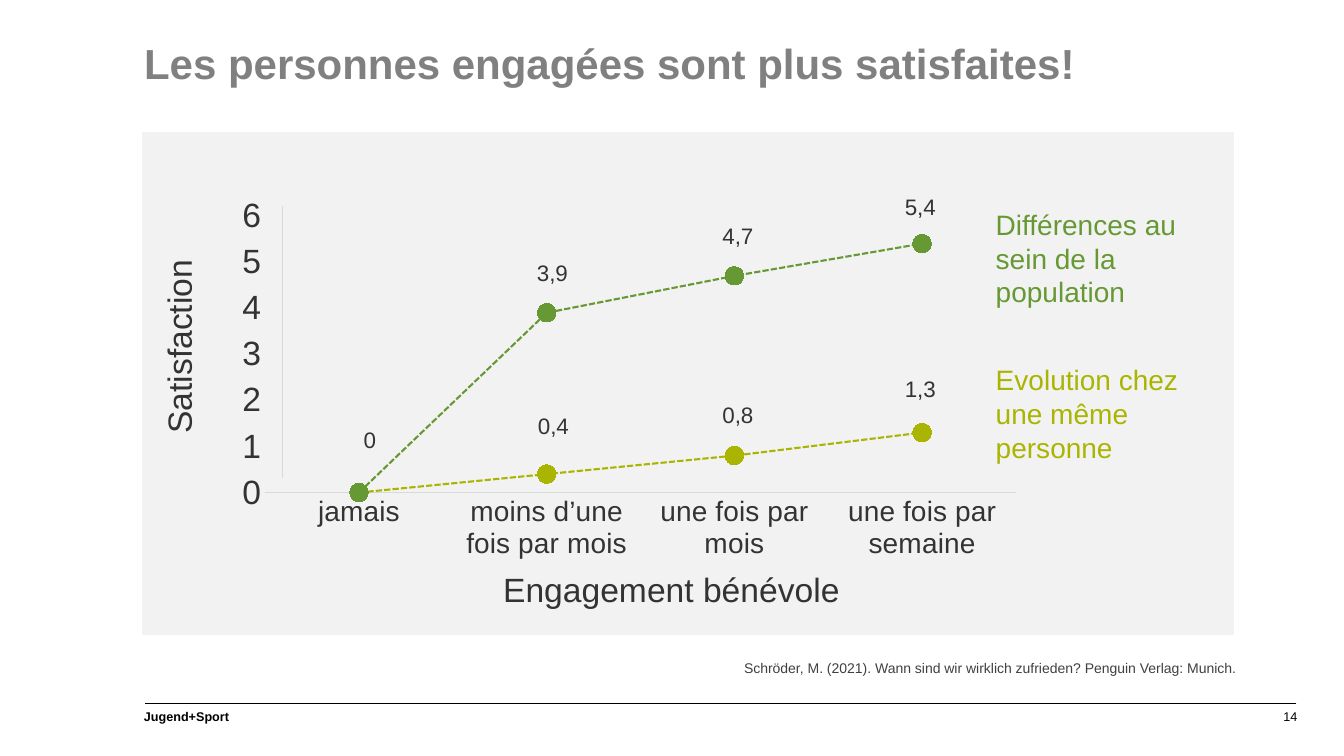
from dataclasses import dataclass

from lxml import etree
from pptx import Presentation
from pptx.chart.data import CategoryChartData
from pptx.dml.color import RGBColor
from pptx.enum.chart import XL_CHART_TYPE, XL_MARKER_STYLE, XL_TICK_MARK
from pptx.enum.dml import MSO_LINE
from pptx.enum.shapes import MSO_CONNECTOR, MSO_SHAPE
from pptx.enum.text import PP_ALIGN
from pptx.oxml.ns import qn
from pptx.util import Inches, Pt

LEFT, CENTER, RIGHT = PP_ALIGN.LEFT, PP_ALIGN.CENTER, PP_ALIGN.RIGHT
RECTANGLE = MSO_SHAPE.RECTANGLE
STRAIGHT = MSO_CONNECTOR.STRAIGHT
LINE_MARKERS = XL_CHART_TYPE.LINE_MARKERS
CIRCLE = XL_MARKER_STYLE.CIRCLE
NO_TICK = XL_TICK_MARK.NONE
DOTTED = MSO_LINE.SQUARE_DOT

# The slide is a grid of 80 columns by 45 rows
COLUMNS, ROWS = 80, 45
DEFAULT_INSETS = (0.1, 0.05, 0.1, 0.05)


@dataclass(frozen=True)
class Theme:
    font: str = "Arial"
    panel: str = "F2F2F2"
    heading: str = "808080"
    ink: str = "333333"
    citation: str = "404040"
    black: str = "000000"
    rule: str = "D9D9D9"
    population: str = "669933"
    person: str = "A9B501"
    title_size: int = 30
    axis_size: int = 24
    legend_size: int = 20
    value_size: int = 16
    citation_size: int = 10
    footer_size: int = 9
    hairline: float = 0.75
    series_line: float = 1.5
    marker_size: int = 13


class SlideBuilder:
    def __init__(self, presentation, theme):
        self.theme = theme
        self.slide = presentation.slides.add_slide(presentation.slide_layouts[6])
        self.column = presentation.slide_width / COLUMNS
        self.row = presentation.slide_height / ROWS

    def place(self, column, row, columns, rows):
        return (int(column * self.column), int(row * self.row),
                int(columns * self.column), int(rows * self.row))

    def style_font(self, font, size, color, bold=False):
        font.name, font.size, font.bold = self.theme.font, Pt(size), bold
        font.color.rgb = RGBColor.from_string(color)

    def style_line(self, line, color, width):
        line.color.rgb = RGBColor.from_string(color)
        line.width = Pt(width)

    def panel(self, box, color):
        shape = self.slide.shapes.add_shape(RECTANGLE, *self.place(*box))
        shape.shadow.inherit = False
        shape.fill.solid()
        shape.fill.fore_color.rgb = RGBColor.from_string(color)
        shape.line.fill.background()

    def text(self, content, box, size, color, align=LEFT, bold=False,
             wrap=True, insets=DEFAULT_INSETS, rotation=0):
        shape = self.slide.shapes.add_textbox(*self.place(*box))
        shape.rotation = rotation
        frame = shape.text_frame
        frame.word_wrap = wrap
        (frame.margin_left, frame.margin_top,
         frame.margin_right, frame.margin_bottom) = map(Inches, insets)
        frame.text = content
        for paragraph in frame.paragraphs:
            paragraph.alignment = align
            for run in paragraph.runs:
                self.style_font(run.font, size, color, bold)

    def line(self, start, end, color):
        x1, y1, x2, y2 = self.place(*start, *end)
        connector = self.slide.shapes.add_connector(STRAIGHT, x1, y1, x2, y2)
        self.style_line(connector.line, color, self.theme.hairline)
        etree.SubElement(connector._element.spPr, qn("a:effectLst"))

    def line_chart(self, box, categories, series_list, plot_area):
        theme = self.theme
        data = CategoryChartData()
        data.categories = categories
        for name, values, _ in series_list:
            data.add_series(name, values)
        chart = self.slide.shapes.add_chart(
            LINE_MARKERS, *self.place(*box), data).chart
        chart.has_legend = chart.has_title = False
        self.style_font(chart.font, theme.citation_size, theme.black)
        chart.plots[0].vary_by_categories = False

        # Axes
        for axis, size in ((chart.category_axis, theme.legend_size),
                           (chart.value_axis, theme.axis_size)):
            axis.major_tick_mark = axis.minor_tick_mark = NO_TICK
            axis.has_major_gridlines = False
            self.style_font(axis.tick_labels.font, size, theme.ink)
        self.style_line(chart.category_axis.format.line, theme.rule, theme.hairline)
        value_axis = chart.value_axis
        value_axis.minimum_scale, value_axis.maximum_scale = 0, 6
        value_axis.major_unit = 1
        value_axis.format.line.fill.background()

        # Series
        for series, (_, _, color) in zip(chart.plots[0].series, series_list):
            series.smooth = False
            self.style_line(series.format.line, color, theme.series_line)
            series.format.line.dash_style = DOTTED
            marker = series.marker
            marker.style, marker.size = CIRCLE, theme.marker_size
            marker.format.fill.solid()
            marker.format.fill.fore_color.rgb = RGBColor.from_string(color)
            self.style_line(marker.format.line, color, theme.hairline)

        # Fixed inner plot area, in shares of the chart
        plot = chart._chartSpace.find(".//" + qn("c:plotArea"))
        for old_layout in plot.findall(qn("c:layout")):
            plot.remove(old_layout)
        layout = etree.Element(qn("c:layout"))
        plot.insert(0, layout)
        manual = etree.SubElement(layout, qn("c:manualLayout"))
        settings = [("layoutTarget", "inner"), ("xMode", "edge"), ("yMode", "edge")]
        for tag, value in settings + list(zip("xywh", plot_area)):
            etree.SubElement(manual, qn("c:" + tag)).set("val", str(value))


def main():
    presentation = Presentation()
    presentation.slide_width, presentation.slide_height = Inches(13.33), Inches(7.5)
    theme = Theme()
    builder = SlideBuilder(presentation, theme)

    # Footer
    builder.text("14", (57.72, 42.18, 19.5, 0.96), theme.footer_size,
                 theme.black, RIGHT, insets=(0, 0, 0, 0))
    builder.line((77.16, 41.88), (8.64, 41.88), theme.black)
    builder.text("Jugend+Sport", (7.98, 41.88, 34.2, 1.5), theme.footer_size,
                 theme.black, bold=True)

    # Panel, title and citation
    builder.panel((8.46, 7.86, 64.98, 29.94), theme.panel)
    builder.text("Les personnes engagées sont plus satisfaites!",
                 (8.58, 1.92, 68.52, 6.6), theme.title_size, theme.heading,
                 bold=True, insets=(0, 0.05, 0, 0.05))
    builder.text("Schröder, M. (2021). Wann sind wir wirklich zufrieden? "
                 "Penguin Verlag: Munich.",
                 (43.32, 38.94, 30.24, 1.62), theme.citation_size, theme.citation,
                 RIGHT, wrap=False, insets=(0.1, 0.05, 0, 0.05))

    # Chart
    categories = ["jamais", "moins d’une fois par mois",
                  "une fois par mois", "une fois par semaine"]
    series_list = [("Series 1", (0, 0.4, 0.8, 1.3), theme.person),
                   ("Series 2", (0, 3.9, 4.7, 5.4), theme.population)]
    builder.line_chart((13.38, 11.28, 48.06, 22.56), categories, series_list,
                       (0.05, 0.07, 0.93, 0.73))

    # Series names
    for name, row, columns, color in (
            ("Différences au\vsein de la population", 12.06, 13.68, theme.population),
            ("Evolution chez\vune même personne", 21.3, 14.82, theme.person)):
        builder.text(name, (58.68, row, columns, 6.66), theme.legend_size, color)

    # Axis titles
    builder.text("Engagement bénévole", (25.2, 33.54, 29.52, 3),
                 theme.axis_size, theme.ink, CENTER)
    builder.text("Satisfaction", (-0.66, 19.14, 22.56, 3),
                 theme.axis_size, theme.ink, CENTER, rotation=270)

    # Value labels
    for value, column, row in (
            ("0", 20.4, 25.08), ("3,9", 31.26, 15.12), ("4,7", 42.3, 12.9),
            ("5,4", 53.16, 11.22), ("0,4", 31.32, 24.24), ("0,8", 42.3, 23.58),
            ("1,3", 53.16, 22.02)):
        builder.text(value, (column, row, 3.24, 2.22), theme.value_size,
                     theme.ink, CENTER)

    # Vertical axis line
    builder.line((16.8, 28.44), (16.8, 12.24), theme.rule)
    presentation.save("out.pptx")


if __name__ == "__main__":
    main()
